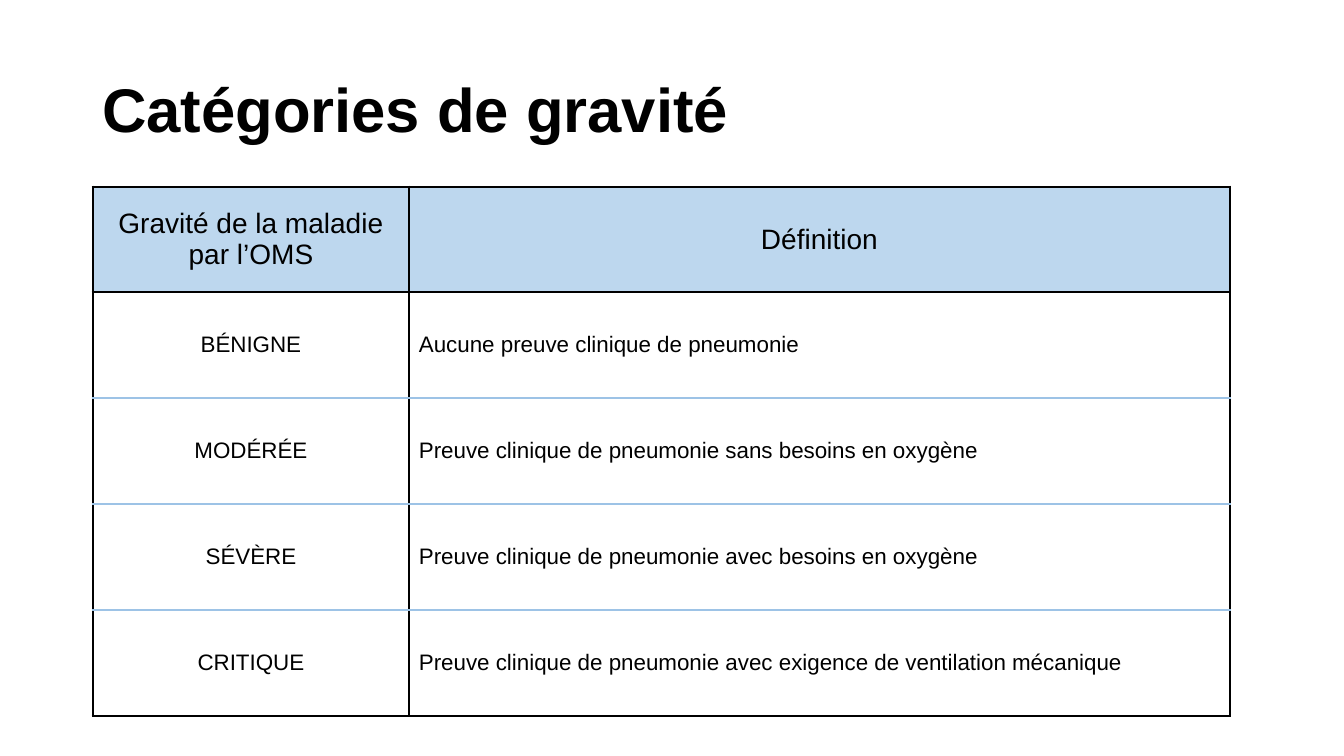
from pptx import Presentation
from pptx.dml.color import RGBColor
from pptx.enum.text import MSO_ANCHOR as Anchor, PP_ALIGN as Align
from pptx.oxml.ns import qn
from pptx.util import Emu, Pt
from lxml.etree import SubElement

TITLE = "Catégories de gravité"
ROWS = [
    ("Gravité de la maladie par l’OMS", "Définition"),
    ("BÉNIGNE", "Aucune preuve clinique de pneumonie"),
    ("MODÉRÉE", "Preuve clinique de pneumonie sans besoins en oxygène"),
    ("SÉVÈRE", "Preuve clinique de pneumonie avec besoins en oxygène"),
    ("CRITIQUE", "Preuve clinique de pneumonie avec exigence de ventilation mécanique"),
]
BLACK = RGBColor(0x00, 0x00, 0x00)
WHITE = RGBColor(0xFF, 0xFF, 0xFF)
HEADER_BLUE = RGBColor(0xBD, 0xD7, 0xEE)
RULE_BLUE = RGBColor(0x9D, 0xC3, 0xE6)
FONT = "Arial"
PAGE_SIZE = (1344, 756)
TITLE_BOX = (92, 40, 1159, 146)
TABLE_CORNER = (93, 187)
COLUMN_WIDTHS = (316, 821)
ROW_HEIGHTS = (105, 106, 106, 106, 106)
OUTER, INNER = 2.25, 1.5


def px(length):
    return Emu(round(length * 914400 / 100.8))


def apply(target, **values):
    for name, value in values.items():
        setattr(target, name, value)


def write(frame, text, size, bold, align, spacing=None):
    frame.text = text
    para = frame.paragraphs[0]
    apply(para, alignment=align, line_spacing=spacing)
    span = para.runs[0].font
    apply(span, name=FONT, size=Pt(size), bold=bold)
    span.color.rgb = BLACK


def add_border(cell, side, color, width):
    line = SubElement(cell._tc.get_or_add_tcPr(), qn(f"a:ln{side}"), w=str(Pt(width)))
    fill = SubElement(line, qn("a:solidFill"))
    SubElement(fill, qn("a:srgbClr"), val=str(color))


def add_title(page):
    title = page.shapes.title
    apply(title, **dict(zip(("left", "top", "width", "height"), map(px, TITLE_BOX))))
    apply(title.text_frame, vertical_anchor=Anchor.MIDDLE, word_wrap=True)
    write(title.text_frame, TITLE, 44, True, Align.LEFT, 0.9)


def add_severity_table(page):
    size = (sum(COLUMN_WIDTHS), sum(ROW_HEIGHTS))
    frame = page.shapes.add_table(len(ROWS), len(COLUMN_WIDTHS), *map(px, TABLE_CORNER + size))
    table = frame.table
    apply(table, first_row=False, horz_banding=False)
    for column, width in zip(table.columns, COLUMN_WIDTHS):
        column.width = px(width)
    for row, height in zip(table.rows, ROW_HEIGHTS):
        row.height = px(height)
    last = len(ROWS) - 1
    for r, texts in enumerate(ROWS):
        header = r == 0
        for c, text in enumerate(texts):
            cell = table.cell(r, c)
            apply(cell, vertical_anchor=Anchor.MIDDLE, **{
                f"margin_{side}": px(10) for side in ("left", "right", "top", "bottom")})
            align = Align.CENTER if header or c == 0 else Align.LEFT
            write(cell.text_frame, text, 20 if header else 16, False, align)
            add_border(cell, "L", BLACK, INNER if c else OUTER)
            add_border(cell, "R", BLACK, OUTER if c else INNER)
            add_border(cell, "T", BLACK if r < 2 else RULE_BLUE, OUTER)
            add_border(cell, "B", BLACK if r in (0, last) else RULE_BLUE, OUTER)
            cell.fill.solid()
            cell.fill.fore_color.rgb = HEADER_BLUE if header else WHITE


def main():
    deck = Presentation()
    deck.slide_width, deck.slide_height = map(px, PAGE_SIZE)
    page = deck.slides.add_slide(deck.slide_layouts[5])
    add_title(page)
    add_severity_table(page)
    deck.save("out.pptx")


if __name__ == "__main__":
    main()
